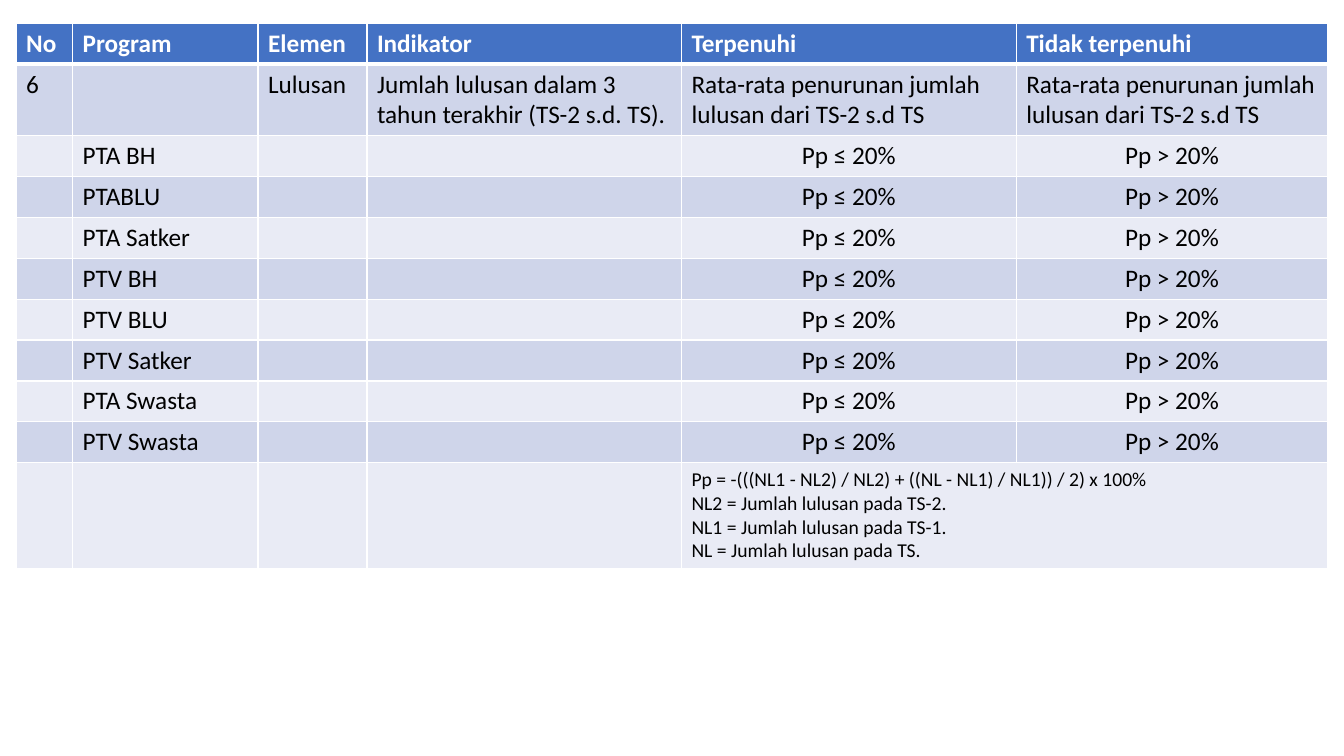
from lxml import etree
from pptx import Presentation
from pptx.dml.color import RGBColor
from pptx.enum.text import PP_ALIGN
from pptx.oxml.ns import qn
from pptx.util import Inches, Pt

LEFT, MID, JUST = PP_ALIGN.LEFT, PP_ALIGN.CENTER, PP_ALIGN.JUSTIFY

# Content
HEAD = ["No", "Program", "Elemen", "Indikator", "Terpenuhi", "Tidak terpenuhi"]
DROP = "Rata-rata penurunan jumlah lulusan dari TS-2 s.d TS"
TOPIC = ["6", "", "Lulusan",
         "Jumlah lulusan dalam 3 tahun terakhir (TS-2 s.d. TS).", DROP, DROP]
UNITS = ["PTA BH", "PTABLU", "PTA Satker", "PTV BH", "PTV BLU",
         "PTV Satker", "PTA Swasta", "PTV Swasta"]
LIMITS = ["Pp ≤ 20%", "Pp > 20%"]
NOTES = ["Pp = -(((NL1 - NL2) / NL2) + ((NL - NL1) / NL1)) / 2) x 100%",
         "NL2 = Jumlah lulusan pada TS-2.",
         "NL1 = Jumlah lulusan pada TS-1.",
         "NL = Jumlah lulusan pada TS."]

# Sizes and colours
WIDTHS = [0.56, 1.84, 1.08, 3.12, 3.32, 3.09]
HEIGHTS = [0.4, 0.7] + [0.4] * len(UNITS) + [1.05]
X, Y = 0.16, 0.23
BLUE, DARK, PALE = "4472C4", "CFD5EA", "E9EBF5"
WHITE, BLACK = "FFFFFF", "000000"


def color(code):
    return RGBColor.from_string(code)


def border(cell, side, width):
    props = cell._tc.get_or_add_tcPr()
    line = etree.SubElement(props, qn("a:" + side), w=str(Pt(width)))
    fill = etree.SubElement(line, qn("a:solidFill"))
    etree.SubElement(fill, qn("a:srgbClr"), val=WHITE)


def write(cell, text, size, ink, bold, align):
    cell.text_frame.text = text
    for para in cell.text_frame.paragraphs:
        para.alignment = align
        para.font.size = Pt(size)
        for run in para.runs:
            font = run.font
            font.name, font.size, font.bold = "Calibri", Pt(size), bold
            font.color.rgb = color(ink)


deck = Presentation()
deck.slide_width, deck.slide_height = Inches(13.33), Inches(7.5)
slide = deck.slides.add_slide(deck.slide_layouts[6])

# Table grid
rows = [HEAD, TOPIC]
rows += [["", unit, "", "", *LIMITS] for unit in UNITS]
rows += [["", "", "", "", "\n".join(NOTES), ""]]
last = len(rows) - 1
table = slide.shapes.add_table(
    len(rows), len(HEAD), Inches(X), Inches(Y),
    Inches(sum(WIDTHS)), Inches(sum(HEIGHTS))).table
for col, width in zip(table.columns, WIDTHS):
    col.width = Inches(width)
for row, height in zip(table.rows, HEIGHTS):
    row.height = Inches(height)
table.cell(last, 4).merge(table.cell(last, 5))

# Cells
for r, row in enumerate(rows):
    back = BLUE if r == 0 else DARK if r % 2 else PALE
    for c, text in enumerate(row):
        cell = table.cell(r, c)
        for side in ("lnL", "lnR", "lnT", "lnB"):
            thick = (r, side) in ((0, "lnB"), (1, "lnT"))
            border(cell, side, 3 if thick else 1)
        cell.fill.solid()
        cell.fill.fore_color.rgb = color(back)
        if cell.is_spanned:
            continue
        note = r == last and c == 4
        align = JUST if note else MID if r > 1 and c > 3 else LEFT
        write(cell, text, 14 if note else 18,
              WHITE if r == 0 else BLACK, r == 0, align)

deck.save("out.pptx")
